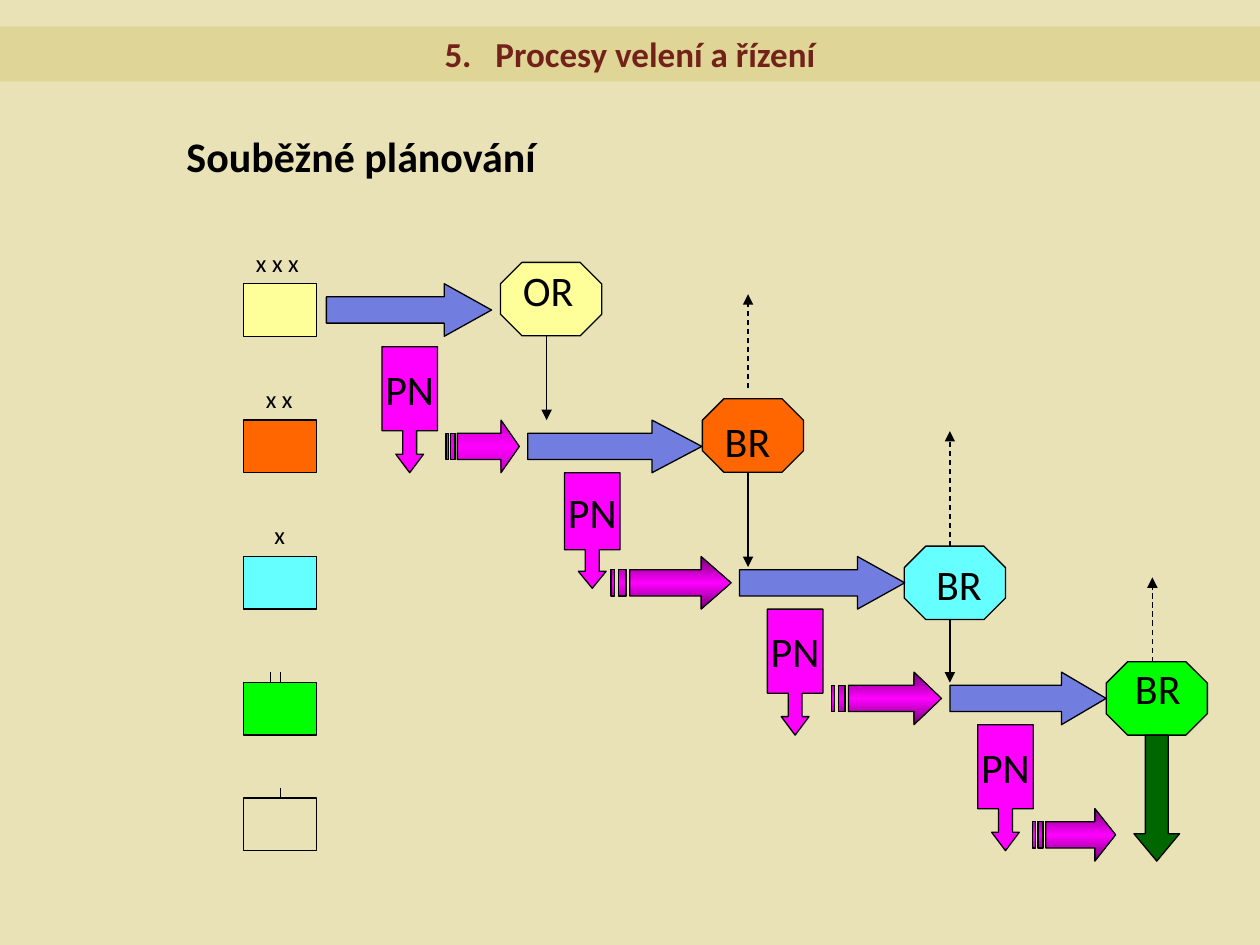
from copy import deepcopy

from pptx import Presentation
from pptx.dml.color import RGBColor
from pptx.enum.dml import MSO_LINE_DASH_STYLE as DASH
from pptx.enum.shapes import MSO_CONNECTOR, MSO_SHAPE as SHAPE
from pptx.enum.text import MSO_ANCHOR, MSO_AUTO_SIZE, PP_ALIGN
from pptx.oxml.ns import qn
from pptx.oxml.xmlchemy import OxmlElement
from pptx.util import Cm, Pt

COLORS = {
    "background": "E9E2B6", "band": "DFD596", "title": "722219", "black": "000000",
    "corps": "FFFF99", "division": "FF6600", "brigade": "66FFFF", "battalion": "00FF00",
    "planning": "727DE0", "execution": "006600", "warning": "FF00FF",
    "shade": "760076", "light shade": "C200C2",
}
FONT = "Calibri"


def rgb(name):
    return RGBColor.from_string(COLORS[name])


class Diagram:
    """Style and current slide, with a method for each kind of element."""

    def __init__(self, slide):
        self.slide = slide
        self.shapes = slide.shapes
        slide.background.fill.solid()
        slide.background.fill.fore_color.rgb = rgb("background")

    def style_text(self, paragraph, size, color="black", bold=False):
        paragraph.font.name = FONT
        paragraph.font.size = Pt(size)
        paragraph.font.bold = bold
        paragraph.font.color.rgb = rgb(color)

    def outline(self, shape):
        shape.line.color.rgb = rgb("black")
        shape.line.width = Pt(0.75)

    def title(self, number, words):
        title = self.shapes.title
        title.left, title.top, title.width, title.height = Cm(0), Cm(0.53), Cm(25.4), Cm(1.11)
        title.fill.solid()
        title.fill.fore_color.rgb = rgb("band")
        frame = title.text_frame
        frame.auto_size = MSO_AUTO_SIZE.NONE
        frame.vertical_anchor = MSO_ANCHOR.MIDDLE
        paragraph = frame.paragraphs[0]
        paragraph.alignment = PP_ALIGN.CENTER
        for text in (number, " ", words):
            paragraph.add_run().text = text
        # Widen the gap after the number by letter spacing
        paragraph.runs[1].font._element.set("spc", "900")
        self.style_text(paragraph, 20, "title", True)

    def text(self, words, left, top, width, height, size, bold=False):
        box = self.shapes.add_textbox(Cm(left), Cm(top), Cm(width), Cm(height))
        box.text_frame.word_wrap = True
        paragraph = box.text_frame.paragraphs[0]
        paragraph.text = words
        self.style_text(paragraph, size, bold=bold)

    def shape(self, kind, left, top, width, height, fill=None, adjustments=()):
        shape = self.shapes.add_shape(kind, Cm(left), Cm(top), Cm(width), Cm(height))
        shape.shadow.inherit = False
        for index, value in enumerate(adjustments):
            shape.adjustments[index] = value
        if fill:
            shape.fill.solid()
            shape.fill.fore_color.rgb = rgb(fill)
        else:
            shape.fill.background()
        self.outline(shape)
        return shape

    def callout(self, words, left, top, height):
        shape = self.shape(SHAPE.DOWN_ARROW_CALLOUT, left, top, 1.12, height, "warning",
                           (0.25, 0.25, height * 0.131, 0.667))
        frame = shape.text_frame
        frame.word_wrap = False
        frame.vertical_anchor = MSO_ANCHOR.MIDDLE
        paragraph = frame.paragraphs[0]
        paragraph.text = words
        paragraph.alignment = PP_ALIGN.CENTER
        self.style_text(paragraph, 24)

    def striped_arrow(self, left, top, width, height, edge):
        def points(pairs):
            return [(Cm(left + x * width), Cm(top + y * height)) for x, y in pairs]

        head = [(0.75, 0), (0.75, 0.25), (5 / 32, 0.25), (5 / 32, 0.75), (0.75, 0.75),
                (0.75, 1), (1, 0.5)]
        stripes = [[(a, 0.25), (a, 0.75), (b, 0.75), (b, 0.25)]
                   for a, b in ((1 / 16, 1 / 8), (0, 1 / 32))]
        start, *rest = points(head)
        builder = self.shapes.build_freeform(*start)
        builder.add_line_segments(rest, close=True)
        for stripe in stripes:
            start, *rest = points(stripe)
            builder.move_to(*start)
            builder.add_line_segments(rest, close=True)
        shape = builder.convert_to_shape()
        shape.shadow.inherit = False
        self.outline(shape)
        # Three-stop gradient, dark at both edges
        shape.fill.gradient()
        shape.fill.gradient_angle = 90
        stop_list = next(shape._element.iter(qn("a:gsLst")))
        stop_list.insert(1, deepcopy(stop_list[0]))
        colors = (edge, "warning", edge)
        for stop, position, color in zip(shape.fill.gradient_stops, (0, 0.5, 1), colors):
            stop.position = position
            stop.color.rgb = rgb(color)

    def vertical_line(self, x, start, end, arrow=False, dashed=False):
        line = self.shapes.add_connector(
            MSO_CONNECTOR.STRAIGHT, Cm(x), Cm(start), Cm(x), Cm(end))
        self.outline(line)
        if dashed:
            line.line.dash_style = DASH.DASH
        if arrow:
            tail = OxmlElement("a:tailEnd")
            tail.set("type", "triangle")
            line.line._get_or_add_ln().append(tail)
        line._element.spPr.append(OxmlElement("a:effectLst"))


def main():
    presentation = Presentation()
    presentation.slide_width, presentation.slide_height = Cm(25.4), Cm(19.05)
    diagram = Diagram(presentation.slides.add_slide(presentation.slide_layouts[5]))

    # Headings
    diagram.title("5.", "Procesy velení a řízení")
    diagram.text("Souběžné plánování", 3.51, 2.51, 7.62, 1.27, 24, bold=True)

    # Unit boxes with their size marks
    levels = ("corps", "division", "brigade", "battalion")
    for level, top in zip((*levels, None), (5.72, 8.47, 11.22, 13.76, 16.09)):
        diagram.shape(SHAPE.RECTANGLE, 4.91, top, 1.47, 1.06, level)
    for mark, left, top, width in (("x x x", 4.91, 4.88, 1.68), ("x x", 5.11, 7.62, 1.4),
                                   ("x", 5.28, 10.36, 0.84)):
        diagram.text(mark, left, top, width, 0.85, 14)
    for x, bottom in ((5.46, 13.76), (5.66, 13.76), (5.66, 16.09)):
        diagram.vertical_line(x, bottom - 0.21, bottom)

    # Order octagons, one step to the right for each level
    tops = (5.29, 8.04, 11.01, 13.34)
    for step, (level, top) in enumerate(zip(levels, tops)):
        diagram.shape(SHAPE.OCTAGON, 10.09 + 4.07 * step, top, 2.04, 1.48, level, (0.293,))
    for order, left, top in (("OR", 10.29, 5.21), ("BR", 14.36, 8.26),
                             ("BR", 18.62, 11.13), ("BR", 22.63, 13.23)):
        diagram.text(order, left, top, 1.8, 1.27, 24)

    # Planning arrows
    for left, top, width in ((6.58, 5.72, 3.33), (10.64, 8.47, 3.51),
                             (14.91, 11.22, 3.33), (19.15, 13.55, 3.15)):
        diagram.shape(SHAPE.RIGHT_ARROW, left, top, width, 1.06, "planning",
                      (0.5, width * 0.27))

    # Orders passed down (solid) and reports passed up (dashed)
    for x, start, end in ((11.02, 6.77, 8.47), (15.08, 9.53, 11.43), (19.15, 12.49, 13.76),
                          (15.08, 7.83, 5.93), (19.15, 11.01, 8.69), (23.23, 13.34, 11.64)):
        diagram.vertical_line(x, start, end, arrow=True, dashed=end < start)
    diagram.shape(SHAPE.DOWN_ARROW, 22.86, 14.82, 0.92, 2.54, "execution", (0.5, 0.6))

    # Warning orders and the preparation they start
    for left, top, height in ((7.7, 6.99, 2.54), (11.38, 9.53, 2.33),
                              (15.47, 12.28, 2.54), (19.71, 14.61, 2.54)):
        diagram.callout("PN", left, top, height)
    for left, top, width, edge in ((8.99, 8.47, 1.48, "light shade"),
                                   (12.32, 11.22, 2.42, "shade"),
                                   (16.76, 13.55, 2.22, "shade"),
                                   (20.82, 16.3, 1.67, "shade")):
        diagram.striped_arrow(left, top, width, 1.06, edge)

    presentation.save("out.pptx")


if __name__ == "__main__":
    main()
